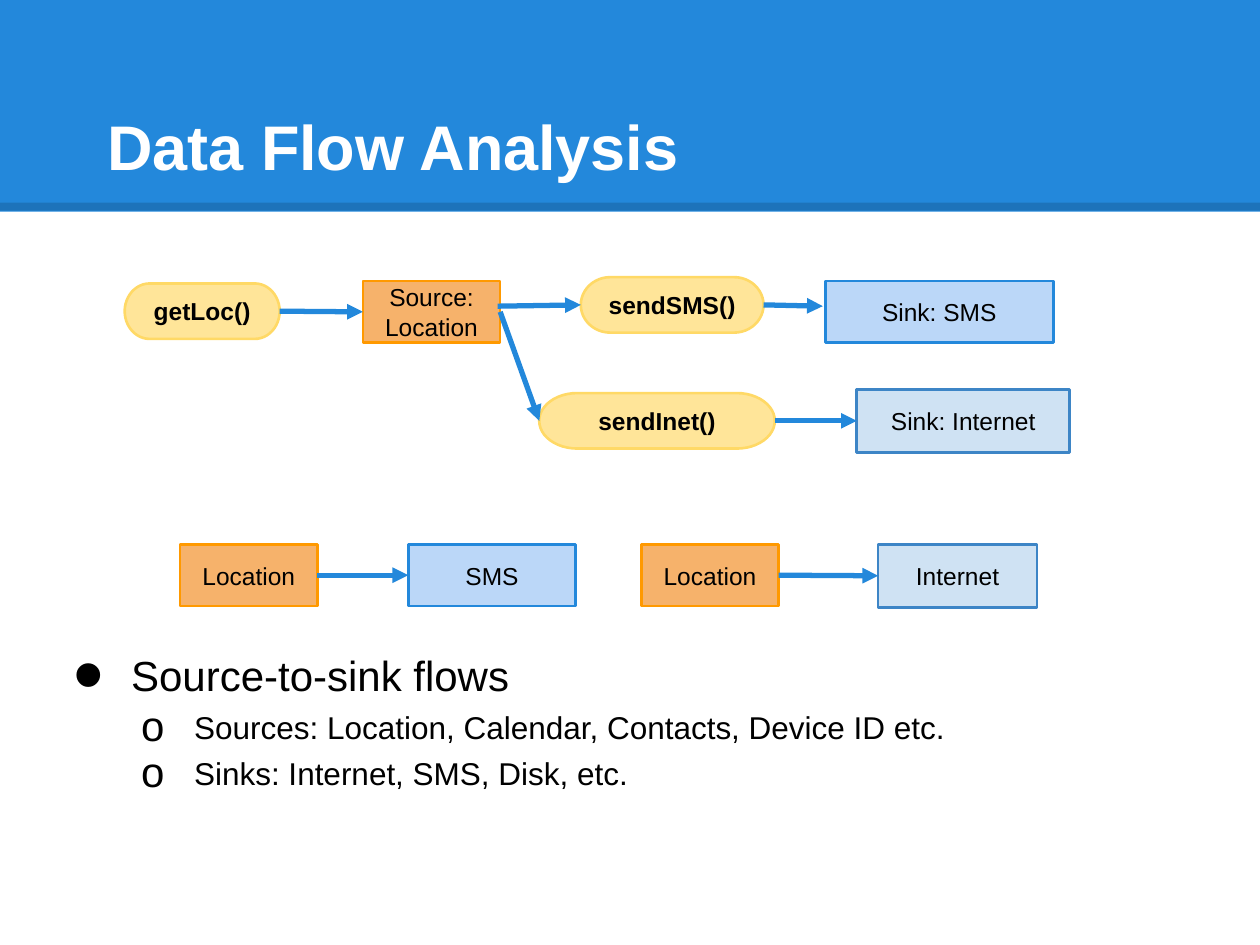
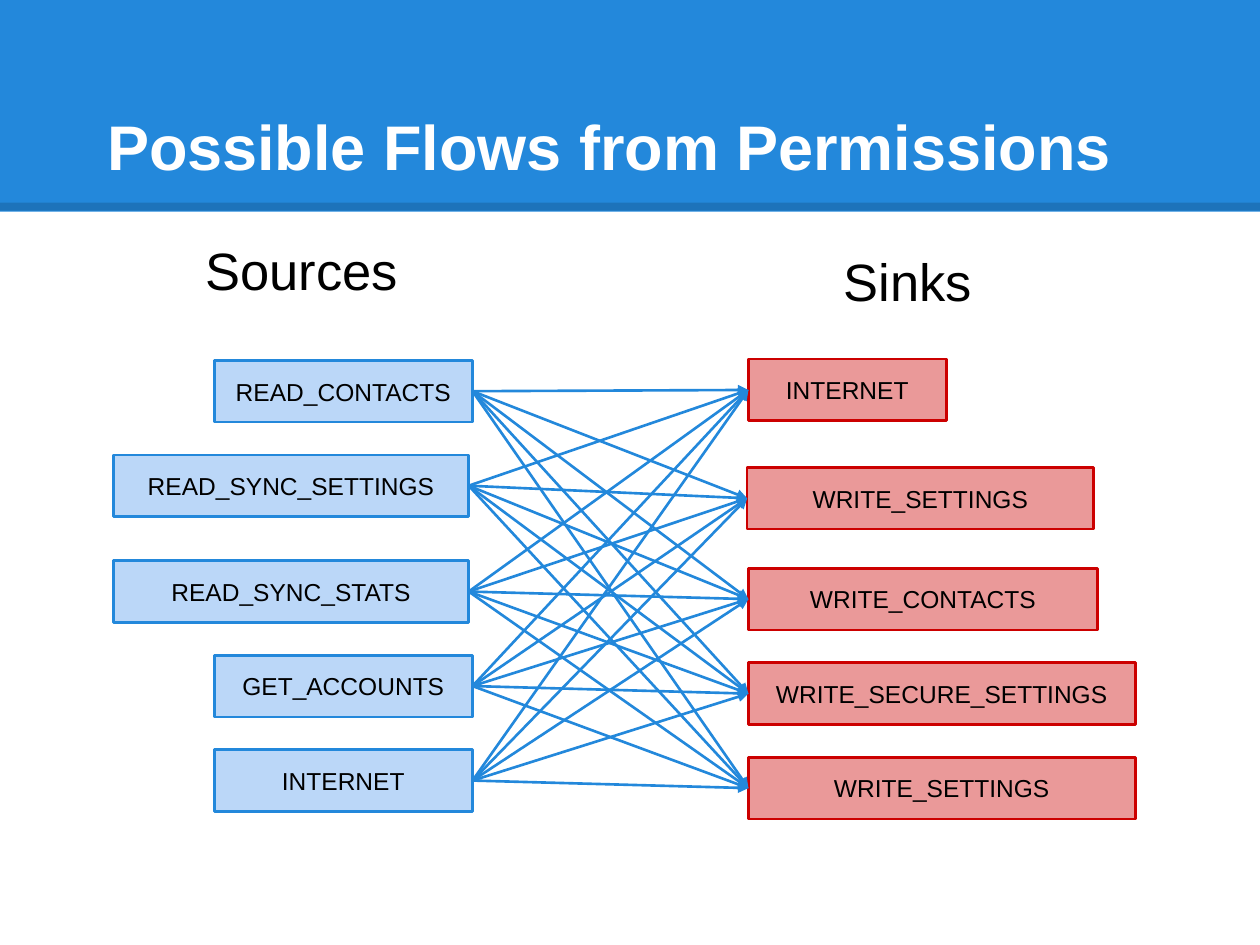
from dataclasses import dataclass
from itertools import product
from typing import NamedTuple

from lxml import etree
from pptx import Presentation
from pptx.dml.color import RGBColor
from pptx.enum.shapes import MSO_CONNECTOR, MSO_SHAPE
from pptx.enum.text import MSO_ANCHOR, MSO_AUTO_SIZE, PP_ALIGN
from pptx.oxml.ns import qn
from pptx.util import Pt

EMU_PER_PX = 9144  # 100 px to the inch
RECT, TERMINATOR = MSO_SHAPE.RECTANGLE, MSO_SHAPE.FLOWCHART_TERMINATOR
STRAIGHT = MSO_CONNECTOR.STRAIGHT
LEFT, CENTER = PP_ALIGN.LEFT, PP_ALIGN.CENTER
TOP, MIDDLE, BOTTOM = MSO_ANCHOR.TOP, MSO_ANCHOR.MIDDLE, MSO_ANCHOR.BOTTOM
NO_AUTOFIT = MSO_AUTO_SIZE.NONE
LEFT_SIDE, RIGHT_SIDE = 1, 3


@dataclass(frozen=True)
class Theme:
    font: str = "Arial"
    blue: RGBColor = RGBColor(0x23, 0x88, 0xDB)
    black: RGBColor = RGBColor(0, 0, 0)
    white: RGBColor = RGBColor(0xFF, 0xFF, 0xFF)
    yellow: RGBColor = RGBColor(0xFF, 0xE5, 0x99)
    gold: RGBColor = RGBColor(0xFF, 0xD9, 0x66)
    peach: RGBColor = RGBColor(0xF6, 0xB2, 0x6B)
    orange: RGBColor = RGBColor(0xFF, 0x99, 0)
    sky: RGBColor = RGBColor(0xBB, 0xD7, 0xF8)
    ice: RGBColor = RGBColor(0xCF, 0xE2, 0xF3)
    steel: RGBColor = RGBColor(0x3D, 0x85, 0xC6)
    pink: RGBColor = RGBColor(0xEA, 0x99, 0x99)
    red: RGBColor = RGBColor(0xCC, 0, 0)
    title_size: int = 36
    heading_size: int = 30
    list_size: int = 24
    sublist_size: int = 18
    node_size: int = 14
    outline: float = 1.5
    thick: int = 3
    rule: float = 4.5


THEME = Theme()


class Box(NamedTuple):
    x: int
    y: int
    w: int
    h: int


class NodeStyle(NamedTuple):
    fill: RGBColor
    line: RGBColor
    preset: MSO_SHAPE = RECT
    bold: bool = False


class Node(NamedTuple):
    text: str
    box: Box
    style: NodeStyle


class Bullet(NamedTuple):
    text: str
    level: int
    size: int
    before: float
    margin: int
    hang: int
    char: str
    percent: int


CALL = NodeStyle(THEME.yellow, THEME.gold, TERMINATOR, True)
SOURCE = NodeStyle(THEME.peach, THEME.orange)
SMS_SINK = NodeStyle(THEME.sky, THEME.blue)
NET_SINK = NodeStyle(THEME.ice, THEME.steel)
READ = NodeStyle(THEME.sky, THEME.blue)
WRITE = NodeStyle(THEME.pink, THEME.red)

FLOW_NODES = {
    "get_loc": Node("getLoc()", Box(99, 225, 123, 44), CALL),
    "source": Node("Source: Location", Box(288, 223, 109, 49), SOURCE),
    "send_sms": Node("sendSMS()", Box(461, 220, 145, 44), CALL),
    "send_inet": Node("sendInet()", Box(428, 312, 187, 44), CALL),
    "sink_sms": Node("Sink: SMS", Box(655, 223, 181, 49), SMS_SINK),
    "sink_inet": Node("Sink: Internet", Box(680, 309, 169, 50), NET_SINK),
    "location_1": Node("Location", Box(143, 432, 109, 49), SOURCE),
    "sms": Node("SMS", Box(324, 432, 133, 49), SMS_SINK),
    "location_2": Node("Location", Box(509, 432, 109, 49), SOURCE),
    "internet": Node("Internet", Box(697, 432, 126, 50), NET_SINK),
}
FLOW_LINKS = [
    ("get_loc", "source"), ("source", "send_inet"), ("send_inet", "sink_inet"),
    ("location_1", "sms"), ("location_2", "internet"),
]
FLOW_BULLETS = [
    Bullet("Source-to-sink flows", 0, THEME.list_size, 6, 50, -46, "•", 208),
    *(Bullet(text, 1, THEME.sublist_size, 4.8, 100, -42, "o", 133) for text in (
        "Sources: Location, Calendar, Contacts, Device ID etc.",
        "Sinks: Internet, SMS, Disk, etc.")),
]
PERMISSION_HEIGHT = 49
# text, x, y, width
READ_PERMISSIONS = [
    ("READ_CONTACTS", 170, 286, 205), ("READ_SYNC_SETTINGS", 90, 361, 282),
    ("READ_SYNC_STATS", 90, 445, 282), ("GET_ACCOUNTS", 170, 520, 205),
    ("INTERNET", 170, 595, 205),
]
WRITE_PERMISSIONS = [
    ("INTERNET", 594, 285, 157), ("WRITE_SETTINGS", 593, 371, 275),
    ("WRITE_CONTACTS", 594, 451, 277), ("WRITE_SECURE_SETTINGS", 594, 526, 307),
    ("WRITE_SETTINGS", 594, 601, 307),
]


def px(n: int) -> int:
    return n * EMU_PER_PX


def emu(box: Box) -> list[int]:
    return [px(n) for n in box]


def place(shape, box: Box) -> None:
    shape.left, shape.top, shape.width, shape.height = emu(box)


def set_frame(tf, anchor) -> None:
    tf.word_wrap = True
    tf.auto_size = NO_AUTOFIT
    tf.vertical_anchor = anchor
    tf.margin_left = tf.margin_right = tf.margin_top = tf.margin_bottom = px(10)


def format_paragraph(p, size: int, align=LEFT, color=THEME.black, bold=False) -> None:
    p.alignment = align
    for r in p.runs:
        r.font.name, r.font.size = THEME.font, Pt(size)
        r.font.color.rgb, r.font.bold = color, bold


def indent(p, margin: int, first: int) -> None:
    pPr = p._p.get_or_add_pPr()
    pPr.set("marL", str(px(margin)))
    pPr.set("indent", str(px(first)))


def add_bullet(p, bullet: Bullet) -> None:
    pPr = p._p.get_or_add_pPr()
    color = etree.SubElement(pPr, qn("a:buClr"))
    etree.SubElement(color, qn("a:srgbClr"), val=str(THEME.black))
    etree.SubElement(pPr, qn("a:buSzPct"), val=str(bullet.percent * 1000))
    etree.SubElement(pPr, qn("a:buFont"), typeface=THEME.font)
    etree.SubElement(pPr, qn("a:buChar"), char=bullet.char)


def add_line(s, start: tuple[int, int], end: tuple[int, int], color: RGBColor, width: float):
    line = s.shapes.add_connector(STRAIGHT, *(px(n) for n in (*start, *end)))
    line.line.color.rgb, line.line.width = color, Pt(width)
    etree.SubElement(line.element.spPr, qn("a:effectLst"))
    return line


def add_arrow(s, start, end, width: float) -> None:
    """Draw an arrow; each end is a node's shape or a fixed point."""
    points = [e if isinstance(e, tuple) else (0, 0) for e in (start, end)]
    arrow = add_line(s, *points, THEME.blue, width)
    if not isinstance(start, tuple):
        arrow.begin_connect(start, RIGHT_SIDE)
    if not isinstance(end, tuple):
        arrow.end_connect(end, LEFT_SIDE)
    etree.SubElement(arrow.element.spPr.get_or_add_ln(), qn("a:tailEnd"), type="triangle")


def add_node(s, node: Node):
    style = node.style
    sp = s.shapes.add_shape(style.preset, *emu(node.box))
    sp.shadow.inherit = False
    sp.fill.solid()
    sp.fill.fore_color.rgb = style.fill
    sp.line.color.rgb, sp.line.width = style.line, Pt(THEME.outline)
    tf = sp.text_frame
    set_frame(tf, MIDDLE)
    tf.text = node.text
    format_paragraph(tf.paragraphs[0], THEME.node_size, CENTER, bold=style.bold)
    return sp


def add_band(s, layout) -> None:
    """Build the title band and its rule, then move both to the back of the layout."""
    band = s.shapes.add_shape(RECT, *emu(Box(0, 0, 1000, 168)))
    band.shadow.inherit = False
    band.fill.solid()
    band.fill.fore_color.rgb = THEME.blue
    band.line.fill.background()
    rule = add_line(s, (0, 164), (1000, 164), THEME.black, THEME.rule)
    color = rule.element.xpath(".//a:srgbClr")[0]
    etree.SubElement(color, qn("a:alpha"), val="15000")
    for i, part in enumerate((band, rule)):
        part.element.xpath(".//p:cNvPr")[0].set("id", str(101 + i))
        layout.shapes.element.insert(2 + i, part.element)


def add_slide(prs, layout, title: str):
    s = prs.slides.add_slide(layout)
    place(s.shapes.title, Box(50, 30, 900, 125))
    tf = s.shapes.title.text_frame
    set_frame(tf, BOTTOM)
    tf.text = title
    p = tf.paragraphs[0]
    format_paragraph(p, THEME.title_size, color=THEME.white, bold=True)
    indent(p, 0, 25)
    return s


def fill_heading(shape, text: str):
    tf = shape.text_frame
    set_frame(tf, TOP)
    tf.text = text
    p = tf.paragraphs[0]
    format_paragraph(p, THEME.heading_size, CENTER)
    return p


def fill_list(body, bullets: list[Bullet]) -> None:
    tf = body.text_frame
    set_frame(tf, MIDDLE)
    tf.text = "\n".join(b.text for b in bullets)
    for p, bullet in zip(tf.paragraphs, bullets):
        p.level, p.space_before = bullet.level, Pt(bullet.before)
        format_paragraph(p, bullet.size)
        indent(p, bullet.margin, bullet.hang)
        add_bullet(p, bullet)


def build_data_flow(s) -> None:
    nodes = {key: add_node(s, node) for key, node in FLOW_NODES.items()}
    for start, end in FLOW_LINKS:
        add_arrow(s, nodes[start], nodes[end], THEME.thick)
    add_arrow(s, (395, 243), nodes["send_sms"], THEME.thick)
    add_arrow(s, nodes["send_sms"], (653, 243), THEME.thick)
    body = s.placeholders[1]
    place(body, Box(44, 509, 854, 126))
    fill_list(body, FLOW_BULLETS)


def build_permissions(s) -> None:
    body = s.placeholders[1]
    place(body, Box(45, 179, 389, 106))
    p = fill_heading(body, "Sources")
    p.space_before = Pt(6)
    indent(p, 38, -38)
    etree.SubElement(p._p.get_or_add_pPr(), qn("a:buNone"))
    fill_heading(s.shapes.add_textbox(*emu(Box(486, 188, 469, 80))), "Sinks")

    sources, sinks = (
        [add_node(s, Node(text, Box(x, y, w, PERMISSION_HEIGHT), style))
         for text, x, y, w in permissions]
        for permissions, style in ((READ_PERMISSIONS, READ), (WRITE_PERMISSIONS, WRITE)))
    for source, sink in product(sources, sinks):
        add_arrow(s, source, sink, THEME.outline)


def main() -> None:
    prs = Presentation()
    prs.slide_width, prs.slide_height = px(1000), px(750)
    layout = prs.slide_layouts[1]
    data_flow = add_slide(prs, layout, "Data Flow Analysis")
    add_band(data_flow, layout)
    build_data_flow(data_flow)
    build_permissions(add_slide(prs, layout, "Possible Flows from Permissions"))
    prs.save("out.pptx")


if __name__ == "__main__":
    main()
